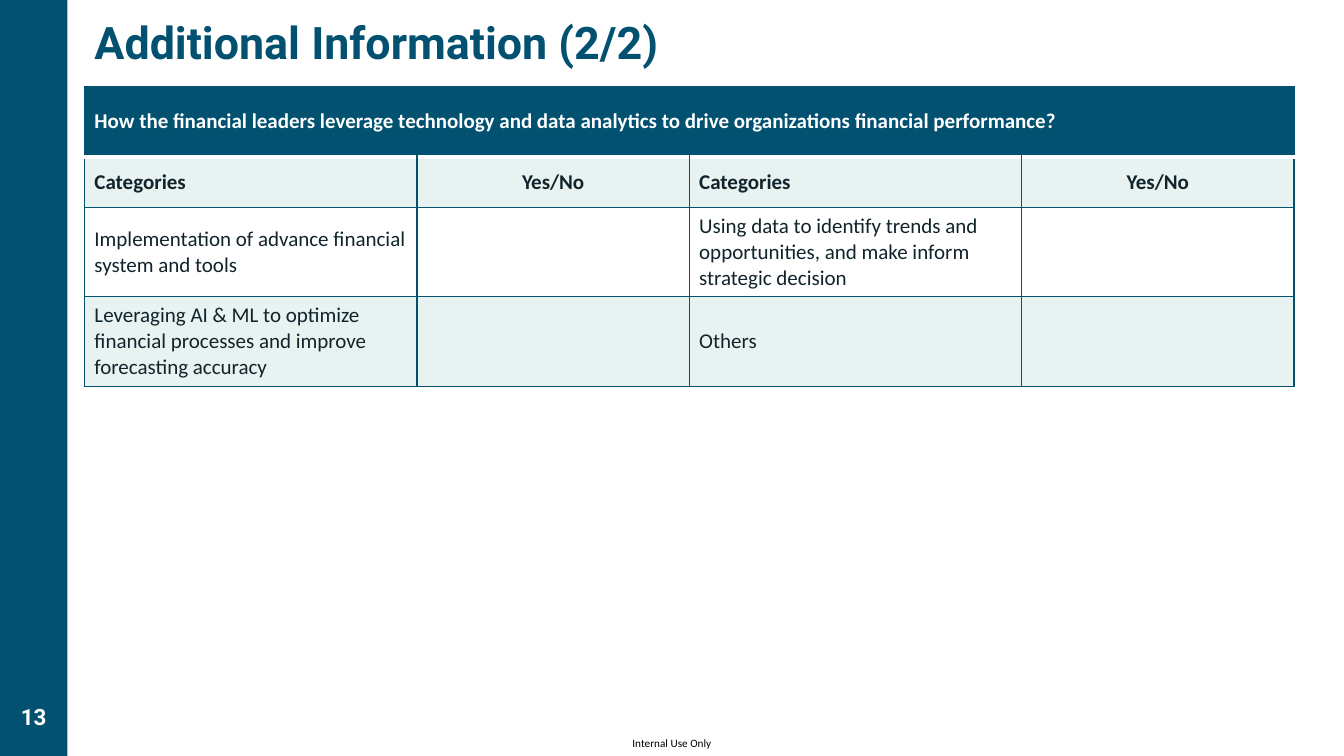
from lxml import etree
from pptx import Presentation
from pptx.dml.color import RGBColor
from pptx.enum.shapes import MSO_SHAPE
from pptx.enum.text import MSO_ANCHOR, PP_ALIGN
from pptx.oxml.ns import qn
from pptx.util import Cm, Pt

RECTANGLE = MSO_SHAPE.RECTANGLE
LEFT, CENTER = PP_ALIGN.LEFT, PP_ALIGN.CENTER
TOP, MIDDLE = MSO_ANCHOR.TOP, MSO_ANCHOR.MIDDLE

TEAL, PALE, WHITE, INK, BLACK = "025171", "E7F2F1", "FFFFFF", "11242B", "000000"
color = RGBColor.from_string


def write(holder, text, size=15, font="Calibri", fill=INK, bold=False,
          align=LEFT, anchor=MIDDLE, margins=(0.25, 0.13)):
    """Fill a text box or a table cell with one formatted paragraph."""
    frame = holder.text_frame
    frame.word_wrap = True
    # Cells keep margins and anchor themselves, boxes keep them in the frame
    target = frame if hasattr(frame, "auto_size") and hasattr(holder, "shape_type") else holder
    target.margin_left = target.margin_right = Cm(margins[0])
    target.margin_top = target.margin_bottom = Cm(margins[1])
    target.vertical_anchor = anchor
    paragraph = frame.paragraphs[0]
    paragraph.text = text
    paragraph.alignment = align
    paragraph.font.size = Pt(size)
    paragraph.font.name = font
    paragraph.font.bold = bold
    paragraph.font.color.rgb = color(fill)


def add_border(cell, side, line_color, width):
    """Draw one side of a cell: L, R, T or B."""
    properties = cell._tc.get_or_add_tcPr()
    line = etree.SubElement(properties, qn(f"a:ln{side}"), w=str(Pt(width)))
    solid = etree.SubElement(line, qn("a:solidFill"))
    etree.SubElement(solid, qn("a:srgbClr"), val=line_color)


presentation = Presentation()
presentation.slide_width = Cm(33.87)
presentation.slide_height = Cm(19.05)
slide = presentation.slides.add_slide(presentation.slide_layouts[6])

# Footer
footer = slide.shapes.add_textbox(Cm(15.6), Cm(18.42), Cm(2.67), Cm(0.63))
write(footer, "Internal Use Only", size=8, fill=BLACK, align=CENTER, margins=(0, 0))

# Side bar with the page number
side_bar = slide.shapes.add_shape(RECTANGLE, 0, 0, Cm(1.7), Cm(19.05))
side_bar.shadow.inherit = False
side_bar.fill.solid()
side_bar.fill.fore_color.rgb = color(TEAL)
side_bar.line.fill.background()
page_number = slide.shapes.add_textbox(0, Cm(17.6), Cm(1.7), Cm(0.94))
write(page_number, "13", size=16, font="Roboto", fill=WHITE, bold=True,
      align=CENTER, anchor=TOP)

# Table of categories
rows = [
    ["How the financial leaders leverage technology and data analytics "
     "to drive organizations financial performance?", "", "", ""],
    ["Categories", "Yes/No", "Categories", "Yes/No"],
    ["Implementation of advance financial system and tools", "",
     "Using data to identify trends and opportunities, and make inform strategic decision", ""],
    ["Leveraging AI & ML to optimize financial processes and improve forecasting accuracy", "",
     "Others", ""],
]
row_heights = [1.78, 1.27, 2.25, 2.25]
row_fills = [TEAL, PALE, WHITE, PALE]
column_widths = [8.38, 6.86] * 2

table = slide.shapes.add_table(
    len(rows), len(column_widths), Cm(2.13), Cm(2.18),
    Cm(sum(column_widths)), Cm(sum(row_heights))).table
table.horz_banding = False
for column, width in zip(table.columns, column_widths):
    column.width = Cm(width)
for row, height in zip(table.rows, row_heights):
    row.height = Cm(height)

for row_index, texts in enumerate(rows):
    for column_index, text in enumerate(texts):
        cell = table.cell(row_index, column_index)
        write(cell, text, fill=WHITE if row_index == 0 else INK, bold=row_index < 2,
              align=CENTER if column_index % 2 else LEFT)
        # A thick white rule parts the heading from the rows below it
        for side in "LRTB":
            is_rule = (row_index, side) in [(0, "B"), (1, "T")]
            add_border(cell, side, WHITE if is_rule else TEAL, 3 if is_rule else 1)
        cell.fill.solid()
        cell.fill.fore_color.rgb = color(row_fills[row_index])
table.cell(0, 0).merge(table.cell(0, 3))

# Title
title = slide.shapes.add_textbox(Cm(2.13), Cm(0.25), Cm(29.21), Cm(2.11))
write(title, "Additional Information (2/2)", size=32, font="Roboto", fill=TEAL,
      bold=True, anchor=TOP)

presentation.save("out.pptx")
